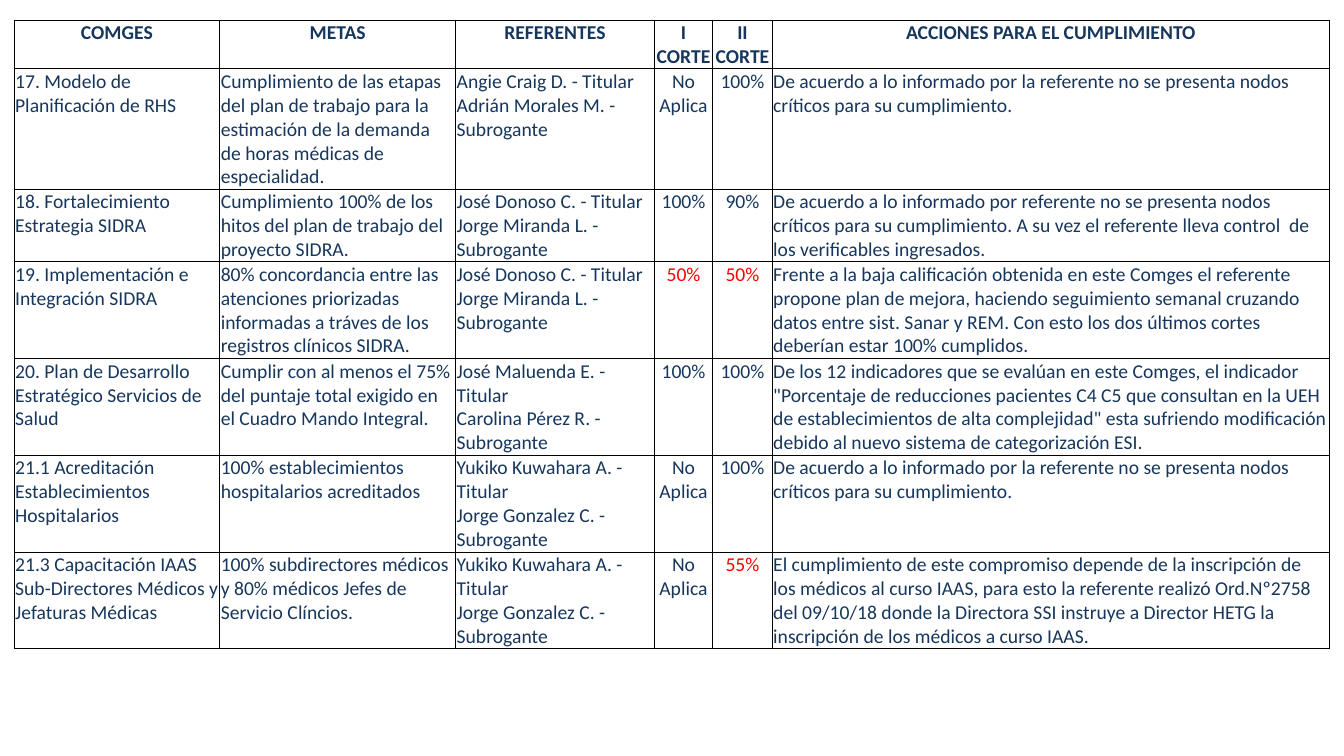
from typing import NamedTuple

from lxml import etree
from pptx import Presentation
from pptx.dml.color import RGBColor
from pptx.enum.text import PP_ALIGN
from pptx.oxml.ns import qn
from pptx.util import Inches, Pt

LEFT = PP_ALIGN.LEFT
CENTER = PP_ALIGN.CENTER
HUES = {"navy": "16365C", "red": "FF0000", "line": "000000"}
FONT = "Calibri"
WIDTHS = (2.04, 2.34, 1.97, 0.58, 0.59, 5.53)
HEIGHTS = (0.48, 1.19, 0.72, 0.96, 0.96, 0.96, 0.96)
HEADS = ("COMGES", "METAS", "REFERENTES", "I CORTE", "II CORTE",
         "ACCIONES PARA EL CUMPLIMIENTO")
CUTS = (3, 4)
LOW = ("50%", "55%")
CLEAR = ("De acuerdo a lo informado por la referente no se presenta nodos "
         "críticos para su cumplimiento.")
SIDRA = "José Donoso C. - Titular\nJorge Miranda L. - Subrogante"
CARE = "Yukiko Kuwahara A. - Titular\nJorge Gonzalez C. - Subrogante"


class Goal(NamedTuple):
    name: str
    target: str
    people: str
    first: str
    second: str
    action: str


GOALS = (
    Goal("17. Modelo de Planificación de RHS",
         "Cumplimiento de las etapas del plan de trabajo para la estimación "
         "de la demanda de horas médicas de especialidad.",
         "Angie Craig D. - Titular\nAdrián Morales M. - Subrogante",
         "No Aplica", "100%", CLEAR),
    Goal("18. Fortalecimiento Estrategia SIDRA",
         "Cumplimiento 100% de los hitos del plan de trabajo del proyecto SIDRA.",
         SIDRA, "100%", "90%",
         "De acuerdo a lo informado por referente no se presenta nodos "
         "críticos para su cumplimiento. A su vez el referente lleva "
         "control  de los verificables ingresados."),
    Goal("19. Implementación e Integración SIDRA",
         "80% concordancia entre las atenciones priorizadas informadas a "
         "tráves de los registros clínicos SIDRA.",
         SIDRA, "50%", "50%",
         "Frente a la baja calificación obtenida en este Comges el referente "
         "propone plan de mejora, haciendo seguimiento semanal cruzando datos "
         "entre sist. Sanar y REM. Con esto los dos últimos cortes deberían "
         "estar 100% cumplidos."),
    Goal("20. Plan de Desarrollo Estratégico Servicios de Salud",
         "Cumplir con al menos el 75% del puntaje total exigido en el Cuadro "
         "Mando Integral.",
         "José Maluenda E. - Titular\nCarolina Pérez R. - Subrogante",
         "100%", "100%",
         "De los 12 indicadores que se evalúan en este Comges, el indicador "
         '"Porcentaje de reducciones pacientes C4 C5 que consultan en la UEH '
         'de establecimientos de alta complejidad" esta sufriendo '
         "modificación debido al nuevo sistema de categorización ESI."),
    Goal("21.1 Acreditación Establecimientos Hospitalarios",
         "100% establecimientos hospitalarios acreditados",
         CARE, "No Aplica", "100%", CLEAR),
    Goal("21.3 Capacitación IAAS Sub-Directores Médicos y Jefaturas Médicas",
         "100% subdirectores médicos y 80% médicos Jefes de Servicio Clíncios.",
         CARE, "No Aplica", "55%",
         "El cumplimiento de este compromiso depende de la inscripción de los "
         "médicos al curso IAAS, para esto la referente realizó Ord.Nº2758 "
         "del 09/10/18 donde la Directora SSI instruye a Director HETG la "
         "inscripción de los médicos a curso IAAS."),
)


def frame(cell, row: int, col: int) -> None:
    head = row == 0
    thick = {"lnL": head or col == 0,
             "lnR": head or col == len(WIDTHS) - 1,
             "lnT": row <= 1,
             "lnB": head}
    props = cell._tc.get_or_add_tcPr()
    for side, bold in thick.items():
        line = etree.SubElement(props, qn(f"a:{side}"),
                                w=str(Pt(1 if bold else 0.5)))
        fill = etree.SubElement(line, qn("a:solidFill"))
        etree.SubElement(fill, qn("a:srgbClr"), val=HUES["line"])


def write(cell, text: str, row: int, col: int) -> None:
    cell.margin_left = cell.margin_right = cell.margin_top = Inches(0.01)
    cell.margin_bottom = 0
    frame(cell, row, col)
    cell.fill.background()
    para = cell.text_frame.paragraphs[0]
    para.text = text
    para.alignment = CENTER if row == 0 or col in CUTS else LEFT
    for run in para.runs:
        run.font.name = FONT
        run.font.size = Pt(14)
        run.font.bold = row == 0
        hue = HUES["red" if text in LOW else "navy"]
        run.font.color.rgb = RGBColor.from_string(hue)


def main() -> None:
    deck = Presentation()
    deck.slide_width = Inches(13.33)
    deck.slide_height = Inches(7.5)
    slide = deck.slides.add_slide(deck.slide_layouts[6])
    table = slide.shapes.add_table(
        len(HEIGHTS), len(WIDTHS), Inches(0.14), Inches(0.2),
        Inches(sum(WIDTHS)), Inches(sum(HEIGHTS))).table
    table.first_row = table.horz_banding = False
    for col, width in enumerate(WIDTHS):
        table.columns[col].width = Inches(width)
    for row, (height, texts) in enumerate(zip(HEIGHTS, (HEADS, *GOALS))):
        table.rows[row].height = Inches(height)
        for col, text in enumerate(texts):
            write(table.cell(row, col), text, row, col)
    deck.save("out.pptx")


if __name__ == "__main__":
    main()
